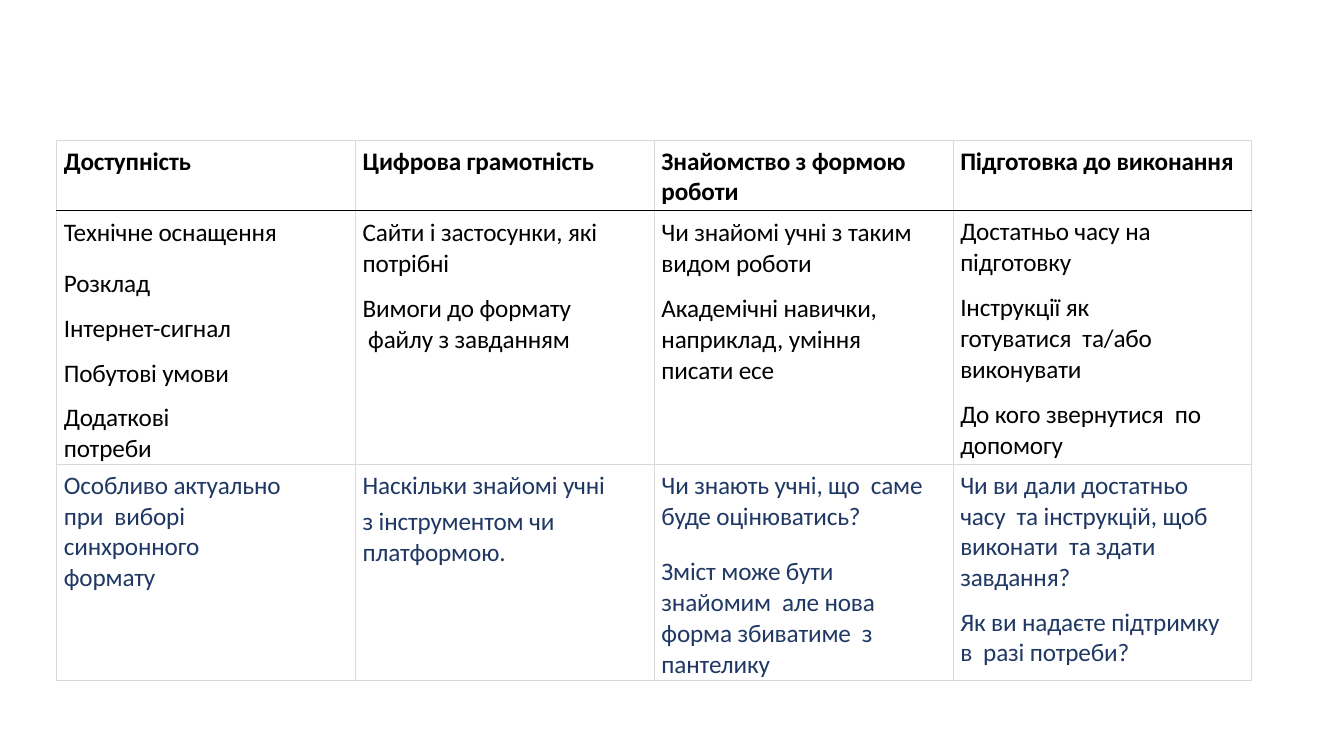
from lxml import etree
from pptx import Presentation
from pptx.dml.color import RGBColor
from pptx.enum.text import MSO_ANCHOR
from pptx.oxml.ns import qn
from pptx.util import Cm, Pt

TOP = MSO_ANCHOR.TOP
BLACK, NAVY, GREY = "000000", "203864", "D9D9D9"
COLUMN_WIDTH = 7.53
ROW_HEIGHTS = (1.78, 6.32, 4.5)
INDENT = 0.18


def color(value):
    return RGBColor.from_string(value)


def item(text, before=0, right=0):
    """One paragraph: space before in points, right indent in centimetres."""
    return {"text": text, "before": before, "right": right}


def write_paragraph(paragraph, text, before=0, right=0, font="Calibri", size=18,
                    bold=False, fill=BLACK):
    paragraph.space_before = Pt(before)
    properties = paragraph._p.get_or_add_pPr()
    properties.set("marL", str(Cm(INDENT)))
    properties.set("marR", str(Cm(right)))
    properties.set("indent", "0")
    run = paragraph.add_run()
    run.text = text
    run.font.name = font
    run.font.size = Pt(size)
    run.font.bold = bold
    run.font.color.rgb = color(fill)
    run._r.get_or_add_rPr().set("spc", "-10")


class SlideBuilder:
    def __init__(self, slide):
        self.slide = slide

    def borders(self, cell, **sides):
        properties = cell._tc.get_or_add_tcPr()
        for side, value in sides.items():
            line = etree.SubElement(properties, qn(f"a:ln{side}"), w=str(Pt(0.75)))
            fill = etree.SubElement(line, qn("a:solidFill"))
            etree.SubElement(fill, qn("a:srgbClr"), val=value)

    def cell(self, cell, items, top, **text_format):
        cell.margin_left = cell.margin_right = cell.margin_bottom = 0
        cell.margin_top = Cm(top)
        cell.vertical_anchor = TOP
        frame = cell.text_frame
        for index, entry in enumerate(items):
            paragraph = frame.add_paragraph() if index else frame.paragraphs[0]
            write_paragraph(paragraph, **entry, **text_format)

    def table(self, left, top, rows, formats):
        columns = len(rows[0])
        frame = self.slide.shapes.add_table(
            len(rows), columns, Cm(left), Cm(top),
            Cm(COLUMN_WIDTH * columns), Cm(sum(ROW_HEIGHTS)))
        table = frame.table
        table.first_row = table.horz_banding = False
        for column in table.columns:
            column.width = Cm(COLUMN_WIDTH)
        for row_index, (row, text_format) in enumerate(zip(rows, formats)):
            table.rows[row_index].height = Cm(ROW_HEIGHTS[row_index])
            for column_index, items in enumerate(row):
                cell = table.cell(row_index, column_index)
                margin = 0.18 if row_index == 1 and column_index < 3 else 0.15
                self.cell(cell, items, margin, **text_format)
                self.borders(cell, L=GREY, R=GREY,
                             T=BLACK if row_index == 1 else GREY,
                             B=BLACK if row_index == 0 else GREY)
                cell.fill.background()


# Table content
HEADINGS = [[item(text, 4)] for text in (
    "Доступність", "Цифрова грамотність",
    "Знайомство з формою  роботи", "Підготовка до виконання")]

CONDITIONS = [
    [item("Технічне оснащення", 4.7), item("Розклад", 14.5),
     item("Інтернет-сигнал", 10), item("Побутові умови", 10),
     item("Додаткові потреби", 9.8, right=3.3)],
    [item("Сайти і застосунки, які  потрібні", 4.7),
     item("Вимоги до формату", 10.4), item(" файлу з завданням")],
    [item("Чи знайомі учні з таким  видом роботи", 4.7),
     item("Академічні навички,  наприклад, уміння писати есе", 10.4, right=1)],
    [item("Достатньо часу на  підготовку", 4),
     item("Інструкції як готуватися  та/або виконувати", 10.3, right=1.78),
     item("До кого звернутися  по допомогу", 10.3)],
]

QUESTIONS = [
    [item("Особливо актуально при  виборі синхронного", 4, right=1.37),
     item("формату")],
    [item("Наскільки знайомі учні", 4), item("з інструментом чи", 4),
     item("платформою.")],
    [item("Чи знають учні, що  саме буде оцінюватись?", 4),
     item("Зміст може бути знайомим  але нова форма збиватиме  з пантелику",
          17.8, right=1)],
    [item("Чи ви дали достатньо часу  та інструкцій, щоб виконати  та здати завдання?",
          4, right=0.56),
     item("Як ви надаєте підтримку в  разі потреби?", 9.8, right=0.56)],
]


def main():
    presentation = Presentation()
    presentation.slide_width, presentation.slide_height = Cm(33.87), Cm(19.05)
    slide = presentation.slides.add_slide(presentation.slide_layouts[6])
    builder = SlideBuilder(slide)
    builder.table(1.43, 3.53, [HEADINGS, CONDITIONS, QUESTIONS],
                  [{"bold": True}, {}, {"fill": NAVY}])
    presentation.save("out.pptx")


if __name__ == "__main__":
    main()
